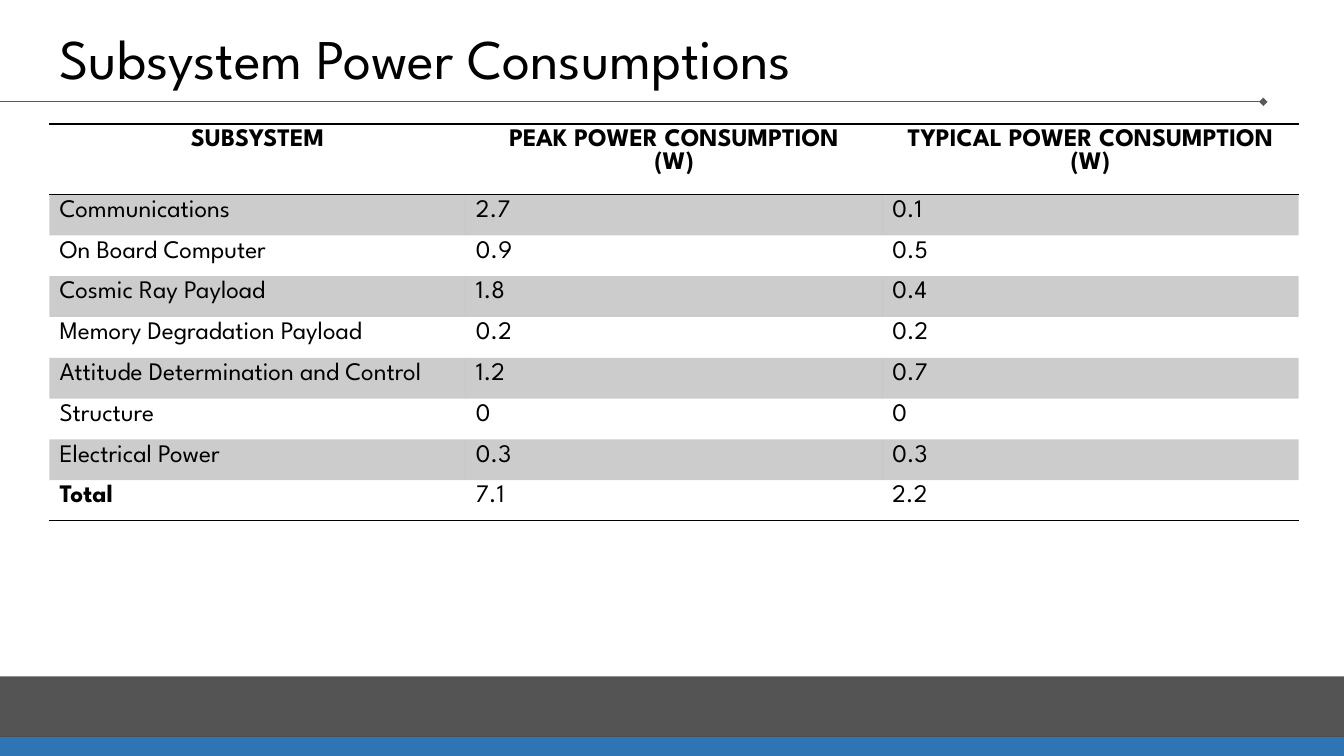
from dataclasses import dataclass

from lxml import etree
from pptx import Presentation
from pptx import util as u
from pptx.dml.color import RGBColor
from pptx.enum import shapes, text
from pptx.oxml import ns


@dataclass(frozen=True)
class Theme:
    font: str = "League Spartan"
    ink: str = "000000"
    rule: str = "595959"
    blue: str = "2E75B6"
    title: int = 40
    body: int = 18
    line: int = 1


THEME = Theme()
PLAIN = "{2D5ABB26-0587-4C30-8999-92F81FD0307C}"  # table style without grid
HEAD = ["SUBSYSTEM", "PEAK POWER CONSUMPTION\n(W)", "TYPICAL POWER CONSUMPTION (W)"]
ROWS = [
    ["Communications", "2.7", "0.1"],
    ["On Board Computer", "0.9", "0.5"],
    ["Cosmic Ray Payload", "1.8", "0.4"],
    ["Memory Degradation Payload", "0.2", "0.2"],
    ["Attitude Determination and Control", "1.2", "0.7"],
    ["Structure", "0", "0"],
    ["Electrical Power", "0.3", "0.3"],
    ["Total", "7.1", "2.2"],
]


def box(*sizes):
    return [u.Inches(size) for size in sizes]


def write(frame, words, size=THEME.body, bold=False, align=text.PP_ALIGN.LEFT,
          space=None):
    frame.word_wrap = True
    for i, part in enumerate(words.split("\n")):
        para = frame.add_paragraph() if i else frame.paragraphs[0]
        para.alignment = align
        para.line_spacing = space
        run = para.add_run()
        run.text = part
        font = run.font
        font.name, font.size, font.bold = THEME.font, u.Pt(size), bold
        font.color.rgb = RGBColor.from_string(THEME.ink)


def paint(fill, color, node, alpha=100):
    """Fill with a colour; node is the XML element that holds the fill."""
    fill.solid()
    fill.fore_color.rgb = RGBColor.from_string(color)
    if alpha < 100:
        tone = node.find(ns.qn("a:solidFill")).find(ns.qn("a:srgbClr"))
        etree.SubElement(tone, ns.qn("a:alpha"), val=str(alpha * 1000))


def band(slide, top, height, color, alpha=100):
    bar = slide.shapes.add_shape(shapes.MSO_SHAPE.RECTANGLE,
                                 *box(0, top, 13.33, height))
    bar.shadow.inherit = False
    bar.line.fill.background()
    paint(bar.fill, color, bar._element.spPr, alpha)


def rule(slide, top, right):
    line = slide.shapes.add_connector(shapes.MSO_CONNECTOR.STRAIGHT,
                                      *box(0, top, right, top))
    line.line.color.rgb = RGBColor.from_string(THEME.rule)
    line.line.width = u.Pt(THEME.line)
    etree.SubElement(line.line._get_or_add_ln(), ns.qn("a:tailEnd"), type="diamond")
    etree.SubElement(line._element.spPr, ns.qn("a:effectLst"))


def border(cell, *sides):
    """Draw cell borders; call before the cell is filled."""
    props = cell._tc.get_or_add_tcPr()
    for side in sides:
        edge = etree.SubElement(props, ns.qn("a:ln" + side),
                                w=str(u.Pt(THEME.line)))
        fill = etree.SubElement(edge, ns.qn("a:solidFill"))
        etree.SubElement(fill, ns.qn("a:srgbClr"), val=THEME.ink)


def grid(slide):
    data = [HEAD] + ROWS
    last = len(data) - 1
    frame = slide.shapes.add_table(len(data), len(HEAD),
                                   *box(0.49, 1.23, 12.39, 3.73))
    table = frame.table
    table._tbl.tblPr.find(ns.qn("a:tableStyleId")).text = PLAIN
    for col in table.columns:
        col.width = u.Inches(4.13)
    for r, row in enumerate(data):
        table.rows[r].height = u.Inches({0: 0.56, last: 0.33}.get(r, 0.405))
        for c, words in enumerate(row):
            cell = table.cell(r, c)
            if r == 0:
                border(cell, "T", "B")
            elif r == last:
                border(cell, "B")
            if r % 2:
                paint(cell.fill, THEME.ink, cell._tc.tcPr, 20)
            else:
                cell.fill.background()
            align = text.PP_ALIGN.LEFT if r else text.PP_ALIGN.CENTER
            write(cell.text_frame, words, align=align,
                  bold=r == 0 or (r == last and c == 0))


def main():
    deck = Presentation()
    deck.slide_width, deck.slide_height = box(13.33, 7.5)
    slide = deck.slides.add_slide(deck.slide_layouts[6])

    # Rule and footer bands
    rule(slide, 1.01, 12.53)
    band(slide, 7.31, 0.2, THEME.blue)
    band(slide, 6.71, 0.6, THEME.ink, alpha=67)

    # Title
    title = slide.shapes.add_textbox(*box(0.49, 0.13, 11.99, 0.83))
    title.text_frame.vertical_anchor = text.MSO_ANCHOR.BOTTOM
    write(title.text_frame, "Subsystem Power Consumptions", size=THEME.title, space=0.9)

    # Power table
    grid(slide)
    deck.save("out.pptx")


if __name__ == "__main__":
    main()
